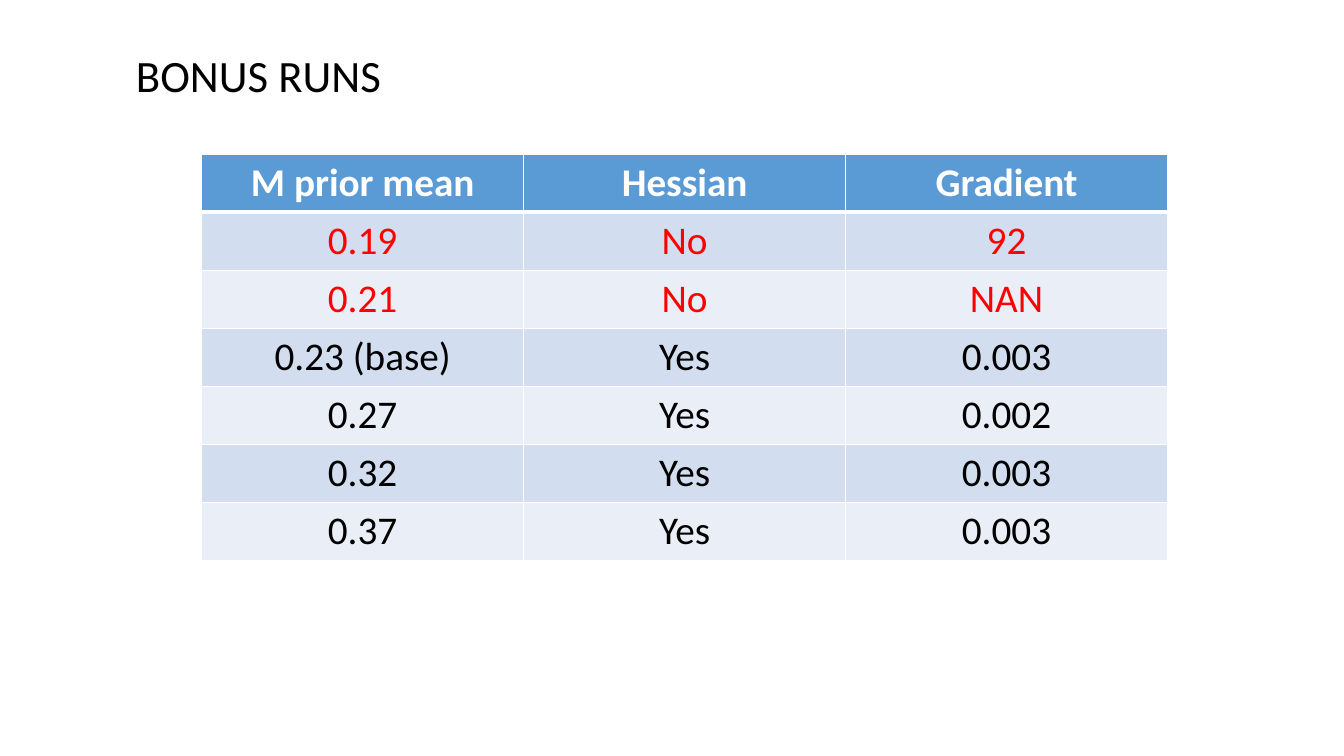
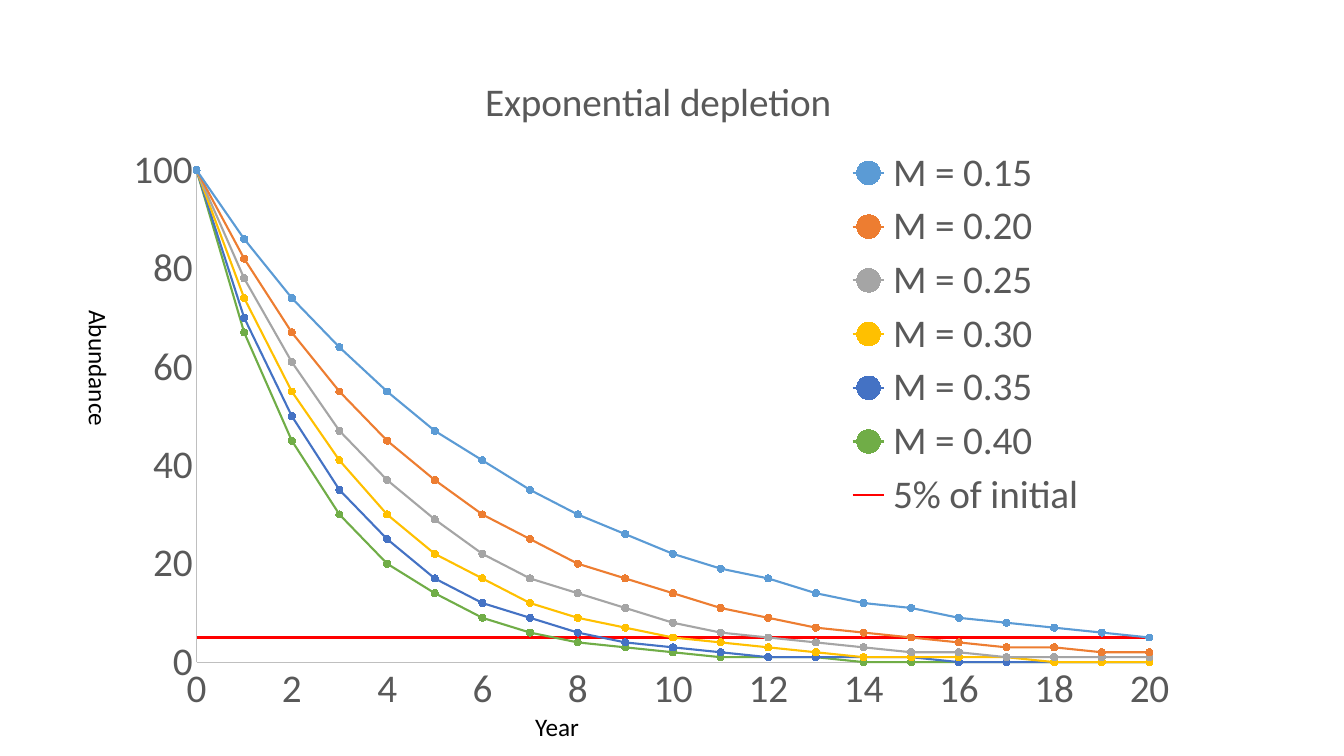
from dataclasses import dataclass
from math import exp
from typing import Any

from lxml import etree
from pptx import Presentation
from pptx import util as u
from pptx.chart import data
from pptx.dml.color import RGBColor
from pptx.enum import chart as ch, text
from pptx.oxml import ns

FONT = "Calibri"
BLACK, WHITE, RED, GREY, RULE = "000000", "FFFFFF", "FF0000", "595959", "BFBFBF"
HEAD, BANDS = "5B9BD5", ("D2DEEF", "EAEFF7")
BIG = 28
YEARS = range(21)
START = 100

ROWS = [
    ("M prior mean", "Hessian", "Gradient"),
    ("0.19", "No", "92"),
    ("0.21", "No", "NAN"),
    ("0.23 (base)", "Yes", "0.003"),
    ("0.27", "Yes", "0.002"),
    ("0.32", "Yes", "0.003"),
    ("0.37", "Yes", "0.003"),
]


@dataclass
class Label:
    words: str
    box: tuple[float, float, float, float]
    size: int
    turn: str = "horz"


@dataclass
class Curve:
    rate: float
    color: str


CURVES = [
    Curve(0.15, "5B9BD5"),
    Curve(0.20, "ED7D31"),
    Curve(0.25, "A5A5A5"),
    Curve(0.30, "FFC000"),
    Curve(0.35, "4472C4"),
    Curve(0.40, "70AD47"),
]
TITLE = Label("BONUS RUNS", (1.25, 0.42, 6.65, 0.64), 32)
AXES = [
    Label("Abundance", (0.68, 2.98, 0.5, 1.62), 18, "eaVert"),
    Label("Year", (5.21, 7.01, 2.14, 0.4), 18),
]


def rgb(code: str) -> RGBColor:
    return RGBColor.from_string(code)


def put(item: Any, **values: Any) -> None:
    for name, value in values.items():
        setattr(item, name, value)


def style(font: Any, size: float, color: str, bold: bool = False) -> None:
    put(font, name=FONT, size=u.Pt(size), bold=bold)
    font.color.rgb = rgb(color)


def paint(fill: Any, color: str) -> None:
    fill.solid()
    fill.fore_color.rgb = rgb(color)


def stroke(line: Any, color: str, width: float) -> None:
    paint(line.fill, color)
    line.width = u.Pt(width)


def write(slide: Any, label: Label) -> None:
    frame = slide.shapes.add_textbox(*map(u.Inches, label.box)).text_frame
    frame.word_wrap = True
    frame._txBody.bodyPr.set("vert", label.turn)
    run = frame.paragraphs[0].add_run()
    run.text = label.words
    style(run.font, label.size, BLACK)


def edge(cell: Any, top: float, foot: float) -> None:
    """Draw the white cell borders; they must come before the fill."""
    props = cell._tc.get_or_add_tcPr()
    widths = {"lnL": 1, "lnR": 1, "lnT": top, "lnB": foot}
    for spot, (tag, width) in enumerate(widths.items()):
        line = etree.Element(ns.qn(f"a:{tag}"), w=str(u.Pt(width)))
        solid = etree.SubElement(line, ns.qn("a:solidFill"))
        etree.SubElement(solid, ns.qn("a:srgbClr"), val=WHITE)
        props.insert(spot, line)


def grid(slide: Any) -> None:
    box = map(u.Inches, (2, 1.53, 9.58, 3.97))
    table = slide.shapes.add_table(len(ROWS), len(ROWS[0]), *box).table
    for i, row in enumerate(ROWS):
        head = i == 0
        back = HEAD if head else BANDS[(i - 1) % 2]
        ink = WHITE if head else RED if row[1] == "No" else BLACK
        for j, words in enumerate(row):
            cell = table.cell(i, j)
            cell.text = words
            para = cell.text_frame.paragraphs[0]
            para.alignment = text.PP_ALIGN.CENTER
            style(para.runs[0].font, BIG, ink, head)
            paint(cell.fill, back)
            edge(cell, 3 if i == 1 else 1, 3 if head else 1)


def place(part: Any, spot: int, **sides: float) -> None:
    """Fix a chart part at fractions of the chart area."""
    for old in part.findall(ns.qn("c:layout")):
        part.remove(old)
    layout = etree.Element(ns.qn("c:layout"))
    manual = etree.SubElement(layout, ns.qn("c:manualLayout"))
    values = {"xMode": "edge", "yMode": "edge", **sides}
    if part.tag == ns.qn("c:plotArea"):
        values = {"layoutTarget": "inner", **values}
    for name, value in values.items():
        etree.SubElement(manual, ns.qn(f"c:{name}"), val=str(value))
    part.insert(spot, layout)


def scale(axis: Any, top: float, step: float) -> None:
    put(axis, minimum_scale=0, maximum_scale=top, major_unit=step,
        has_major_gridlines=False, has_title=False,
        major_tick_mark=ch.XL_TICK_MARK.NONE,
        minor_tick_mark=ch.XL_TICK_MARK.NONE)
    put(axis.tick_labels, number_format="0", number_format_is_linked=False)
    style(axis.tick_labels.font, BIG, GREY)
    stroke(axis.format.line, RULE, 0.75)


def plot(slide: Any) -> None:
    sets = data.XyChartData()
    for curve in CURVES:
        series = sets.add_series(f"M = {curve.rate:.2f}")
        for year in YEARS:
            series.add_data_point(year, round(START * exp(-curve.rate * year)))
    limit = sets.add_series("5% of initial")
    for year in YEARS:
        limit.add_data_point(year, START * 5 // 100)

    box = map(u.Inches, (1.09, 0.4, 10.74, 6.78))
    chart = slide.shapes.add_chart(ch.XL_CHART_TYPE.XY_SCATTER_LINES, *box, sets).chart
    style(chart.font, 10, BLACK)
    chart.plots[0].vary_by_categories = False
    for series, color in zip(chart.plots[0].series, [c.color for c in CURVES] + [RED]):
        series.smooth = False
        stroke(series.format.line, color, 1.5)
        mark = series.marker
        if color == RED:
            mark.style = ch.XL_MARKER_STYLE.NONE
            continue
        put(mark, style=ch.XL_MARKER_STYLE.CIRCLE, size=5)
        paint(mark.format.fill, color)
        stroke(mark.format.line, color, 0.75)

    scale(chart.category_axis, START // 5, 2)
    scale(chart.value_axis, START, 20)
    put(chart, has_title=True, has_legend=True)
    title = chart.chart_title
    title.text_frame.text = "Exponential depletion"
    style(title.text_frame.paragraphs[0].runs[0].font, BIG, GREY)
    put(chart.legend, position=ch.XL_LEGEND_POSITION.RIGHT, include_in_layout=True)
    style(chart.legend.font, BIG, GREY)

    place(title._element, 1, x=0.34, y=0.04)
    place(chart.legend._element, 1, x=0.68, y=0.15, w=0.22, h=0.56)
    area = chart._chartSpace.find(".//" + ns.qn("c:plotArea"))
    place(area, 0, x=0.08, y=0.19, w=0.88, h=0.72)


def main() -> None:
    deck = Presentation()
    put(deck, slide_width=u.Inches(13.33), slide_height=u.Inches(7.5))
    blank = deck.slide_layouts[6]
    runs = deck.slides.add_slide(blank)
    grid(runs)
    write(runs, TITLE)
    decay = deck.slides.add_slide(blank)
    plot(decay)
    for label in AXES:
        write(decay, label)
    deck.save("out.pptx")


if __name__ == "__main__":
    main()
